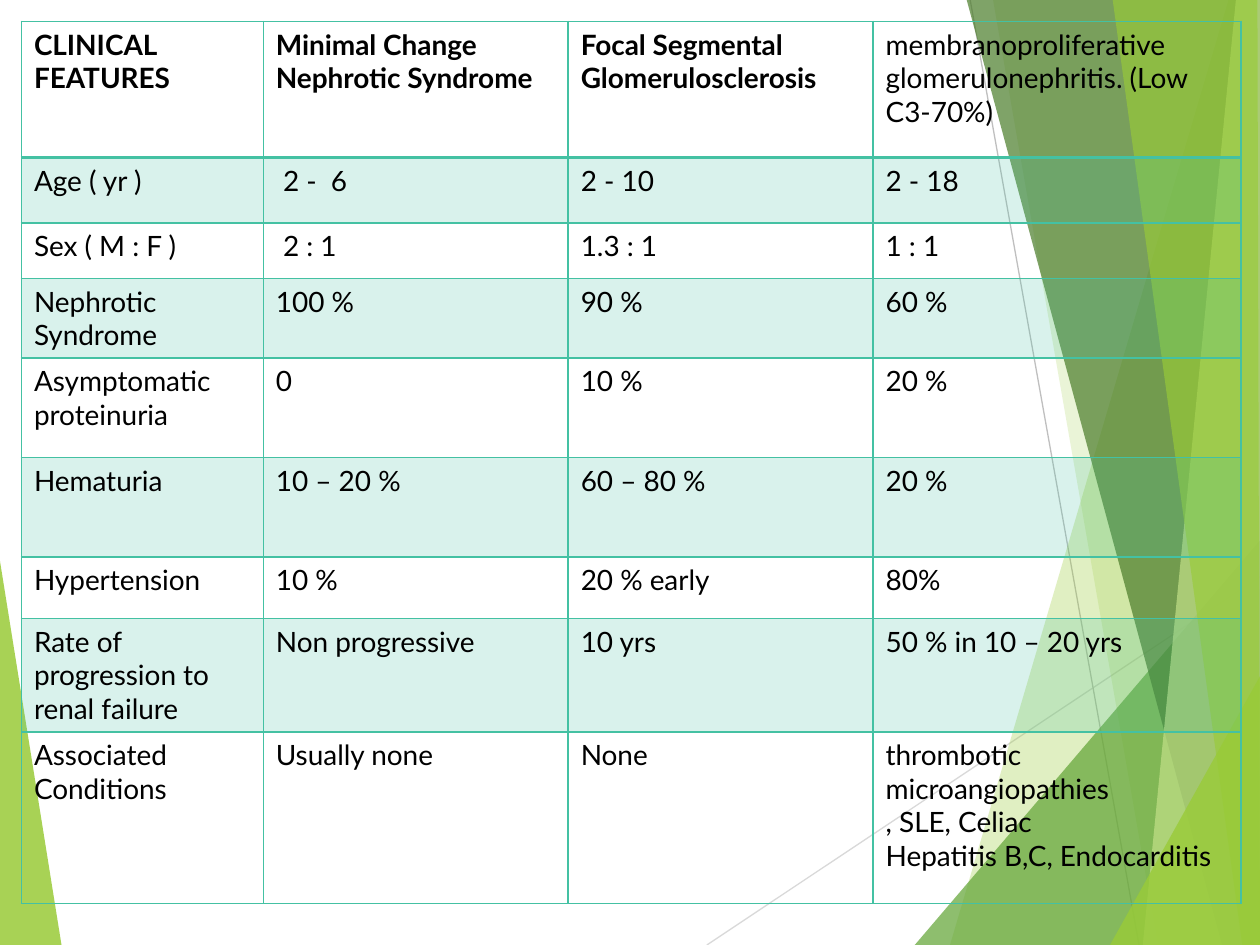
from lxml.etree import SubElement
from pptx import Presentation
from pptx.dml.color import RGBColor
from pptx.enum.shapes import MSO_CONNECTOR
from pptx.oxml.ns import qn
from pptx.util import Inches, Pt

FONT = "Lato"
COLORS = {
    "lime": "99CB38", "green": "63A537", "forest": "4A7C29", "pale": "C2E088",
    "silver": "D9D9D9", "grey": "BFBFBF", "teal": "44C1A3", "black": "000000",
}
LEFT, RIGHT, TOP, BOTTOM = -0.01, 10.01, -0.01, 7.5

# colour, opacity in percent, corners in inches
LEFT_FACET = ("lime", 85, [(LEFT, 4.39), (0.49, 7.51), (LEFT, BOTTOM)])
RIGHT_FACETS = [
    ("lime", 30, [(9.75, 0), (7.54, BOTTOM), (RIGHT, BOTTOM), (RIGHT, 0)]),
    ("lime", 20, [(7.88, TOP), (9.19, BOTTOM), (RIGHT, BOTTOM), (RIGHT, TOP)]),
    ("green", 72, [(7.26, BOTTOM), (10, 4.29), (RIGHT, BOTTOM)]),
    ("forest", 70, [(7.67, TOP), (9.7, BOTTOM), (RIGHT, BOTTOM), (RIGHT, TOP)]),
    ("pale", 70, [(9.81, TOP), (9.07, BOTTOM), (RIGHT, BOTTOM), (10, TOP)]),
    ("lime", 65, [(8.83, TOP), (9.86, BOTTOM), (10, BOTTOM), (9.98, TOP)]),
    ("lime", 80, [(8.81, BOTTOM), (RIGHT, 5.35), (RIGHT, BOTTOM)]),
]
RAYS = [("silver", (5.61, 7.5), (10.01, 4.57)), ("grey", (7.7, 0), (9.04, 7.5))]

COL_WIDTHS = [1.92, 2.42, 2.42, 2.92]
ROW_HEIGHTS = [1.08, 0.52, 0.44, 0.63, 0.79, 0.79, 0.49, 0.9, 1.36]
ROWS = [
    ["CLINICAL FEATURES", "Minimal Change Nephrotic Syndrome",
     "Focal Segmental Glomerulosclerosis",
     "membranoproliferative glomerulonephritis. (Low C3-70%)"],
    ["Age ( yr )", " 2 -  6", "2 - 10", "2 - 18"],
    ["Sex ( M : F )", " 2 : 1", "1.3 : 1", "1 : 1"],
    ["Nephrotic Syndrome", "100 %", "90 %", "60 %"],
    ["Asymptomatic proteinuria", "0", "10 %", "20 %"],
    ["Hematuria", "10 – 20 %", "60 – 80 %", "20 %"],
    ["Hypertension", "10 %", "20 % early", "80%"],
    ["Rate of progression to renal failure", "Non progressive", "10 yrs",
     "50 % in 10 – 20 yrs"],
    ["Associated Conditions", "Usually none", "None",
     "thrombotic microangiopathies\n, SLE, Celiac\nHepatitis B,C, Endocarditis"],
]


def rgb(name):
    return RGBColor.from_string(COLORS[name])


def set_fill(fill, color, opacity):
    """Solid fill with an opacity in percent."""
    fill.solid()
    fill.fore_color.rgb = rgb(color)
    clr = fill._xPr.find(qn("a:solidFill"))[0]
    SubElement(clr, qn("a:alpha"), val=str(opacity * 1000))


def add_facet(s, color, opacity, corners):
    points = [(Inches(x), Inches(y)) for x, y in corners]
    builder = s.shapes.build_freeform(*points[0])
    builder.add_line_segments(points[1:], close=True)
    sp = builder.convert_to_shape()
    sp.shadow.inherit = False
    sp.line.fill.background()
    set_fill(sp.fill, color, opacity)


def add_ray(s, color, start, end):
    ends = [Inches(v) for v in (*start, *end)]
    line = s.shapes.add_connector(MSO_CONNECTOR.STRAIGHT, *ends)
    line.line.color.rgb = rgb(color)
    line.line.width = Pt(0.75)
    SubElement(line._element.spPr, qn("a:effectLst"))


def write(tf, text, size=16, color="black", bold=False):
    """Write one paragraph per line of text."""
    for i, content in enumerate(text.split("\n")):
        p = tf.add_paragraph() if i else tf.paragraphs[0]
        r = p.add_run()
        r.text = content
        r.font.name = FONT
        r.font.size = Pt(size)
        r.font.bold = bold
        r.font.color.rgb = rgb(color)


def set_borders(cell, color, **widths):
    """Line widths in points by side; call before the fill is set."""
    tcPr = cell._tc.get_or_add_tcPr()
    for side in "LRTB":
        ln = SubElement(tcPr, qn(f"a:ln{side}"), w=str(Pt(widths.get(side, 1))))
        SubElement(SubElement(ln, qn("a:solidFill")), qn("a:srgbClr"),
                   val=COLORS[color])


def add_feature_table(s):
    frame = s.shapes.add_table(len(ROWS), len(COL_WIDTHS), Inches(0.17), Inches(0.17),
                               Inches(sum(COL_WIDTHS)), Inches(sum(ROW_HEIGHTS)))
    table = frame.table
    for col, width in zip(table.columns, COL_WIDTHS):
        col.width = Inches(width)
    for row, height in zip(table.rows, ROW_HEIGHTS):
        row.height = Inches(height)
    for i, texts in enumerate(ROWS):
        for j, text in enumerate(texts):
            cell = table.cell(i, j)
            write(cell.text_frame, text, bold=i == 0 and j < 3)
            set_borders(cell, "teal", T=2 if i == 1 else 1, B=2 if i == 0 else 1)
            if i % 2:
                set_fill(cell.fill, "teal", 20)
            else:
                cell.fill.background()


def main():
    prs = Presentation()
    prs.slide_width, prs.slide_height = Inches(10), Inches(7.5)
    s = prs.slides.add_slide(prs.slide_layouts[6])
    add_facet(s, *LEFT_FACET)
    for ray in RAYS:
        add_ray(s, *ray)
    for facet in RIGHT_FACETS:
        add_facet(s, *facet)
    add_feature_table(s)
    prs.save("out.pptx")


if __name__ == "__main__":
    main()
